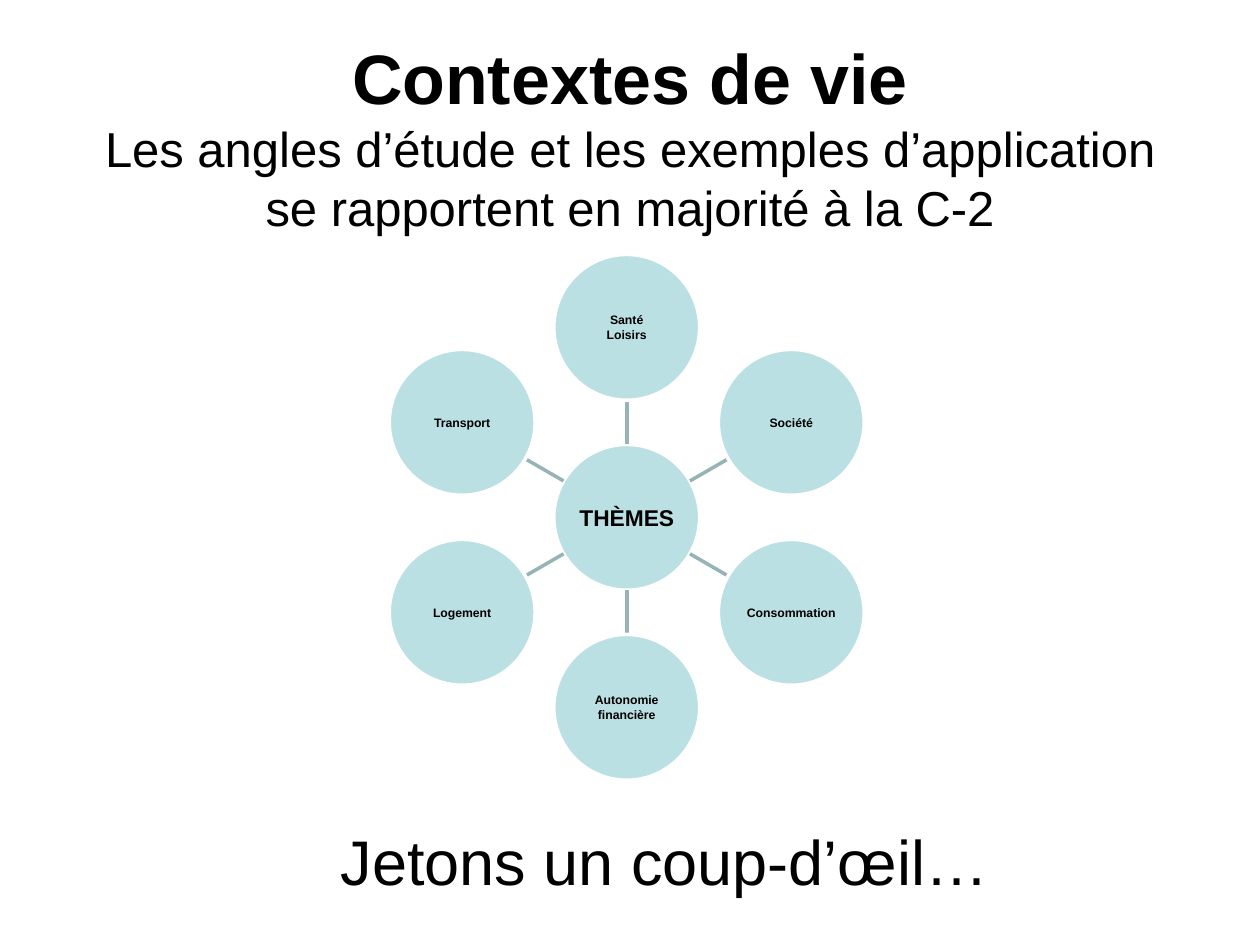
from math import cos, radians, sin

from lxml import etree
from pptx import Presentation
from pptx.dml.color import RGBColor
from pptx.enum import shapes, text
from pptx.oxml.ns import qn
from pptx.util import Cm, Pt

BLACK, WHITE, AQUA, GREY = "000000", "FFFFFF", "BBE0E3", "96B3B6"
THEMES = [
    ["Santé", "Loisirs"],
    ["Société"],
    ["Consommation"],
    ["Autonomie", "financière"],
    ["Logement"],
    ["Transport"],
]


def color(value):
    return RGBColor.from_string(value)


def add_run(p, words, size, bold=False):
    r = p.add_run()
    r.text = words
    r.font.name = "Arial"
    r.font.size = Pt(size)
    r.font.bold = bold
    r.font.color.rgb = color(BLACK)


def add_text_box(slide, left, top, width, height):
    sp = slide.shapes.add_textbox(Cm(left), Cm(top), Cm(width), Cm(height))
    tf = sp.text_frame
    tf.word_wrap = True
    tf.vertical_anchor = text.MSO_ANCHOR.MIDDLE
    p = tf.paragraphs[0]
    p.alignment = text.PP_ALIGN.CENTER
    return p


def add_title(slide, left, top, width, height):
    p = add_text_box(slide, left, top, width, height)
    add_run(p, "Contextes de vie", 40, True)
    p.add_line_break()
    add_run(p, "Les angles d’étude et les exemples d’application "
               "se rapportent en majorité à la C-2", 28)


def add_circle(slide, x, y, diameter, lines, size):
    sp = slide.shapes.add_shape(
        shapes.MSO_SHAPE.OVAL, Cm(x - diameter / 2), Cm(y - diameter / 2),
        Cm(diameter), Cm(diameter))
    sp.shadow.inherit = False
    sp.fill.solid()
    sp.fill.fore_color.rgb = color(AQUA)
    sp.line.color.rgb = color(WHITE)
    sp.line.width = Pt(2)
    tf = sp.text_frame
    tf.word_wrap = True
    tf.vertical_anchor = text.MSO_ANCHOR.MIDDLE
    tf.margin_left = tf.margin_right = tf.margin_top = tf.margin_bottom = 0
    for i, line in enumerate(lines):
        p = tf.add_paragraph() if i else tf.paragraphs[0]
        p.alignment = text.PP_ALIGN.CENTER
        add_run(p, line, size, True)


def add_spoke(slide, x1, y1, x2, y2):
    sp = slide.shapes.add_connector(
        shapes.MSO_CONNECTOR.STRAIGHT, Cm(x1), Cm(y1), Cm(x2), Cm(y2))
    sp.line.color.rgb = color(GREY)
    sp.line.width = Pt(2)
    etree.SubElement(sp._element.spPr, qn("a:effectLst"))


def add_theme_wheel(slide, left, top, width, height):
    diameter = 2.94
    orbit = (height - diameter) / 2
    x, y = left + width / 2, top + height / 2
    add_circle(slide, x, y, diameter, ["THÈMES"], 13)
    for i, lines in enumerate(THEMES):
        angle = radians(360 / len(THEMES) * i - 90)
        dx, dy = cos(angle), sin(angle)
        start, end = diameter / 2, orbit - diameter / 2
        add_spoke(slide, x + start * dx, y + start * dy,
                  x + end * dx, y + end * dy)
        add_circle(slide, x + orbit * dx, y + orbit * dy, diameter, lines, 7)


def add_closing(slide, left, top, width, height):
    p = add_text_box(slide, left, top, width, height)
    add_run(p, "Jetons un coup-d’œil…", 36)


def main():
    prs = Presentation()
    prs.slide_width, prs.slide_height = Cm(25.4), Cm(19.05)
    slide = prs.slides.add_slide(prs.slide_layouts[6])
    add_title(slide, 1.27, 1.14, 22.86, 3.18)
    add_theme_wheel(slide, 7.85, 5.13, 9.57, 10.6)
    add_closing(slide, 3.1, 16.54, 20.6, 1.6)
    prs.save("out.pptx")


if __name__ == "__main__":
    main()
